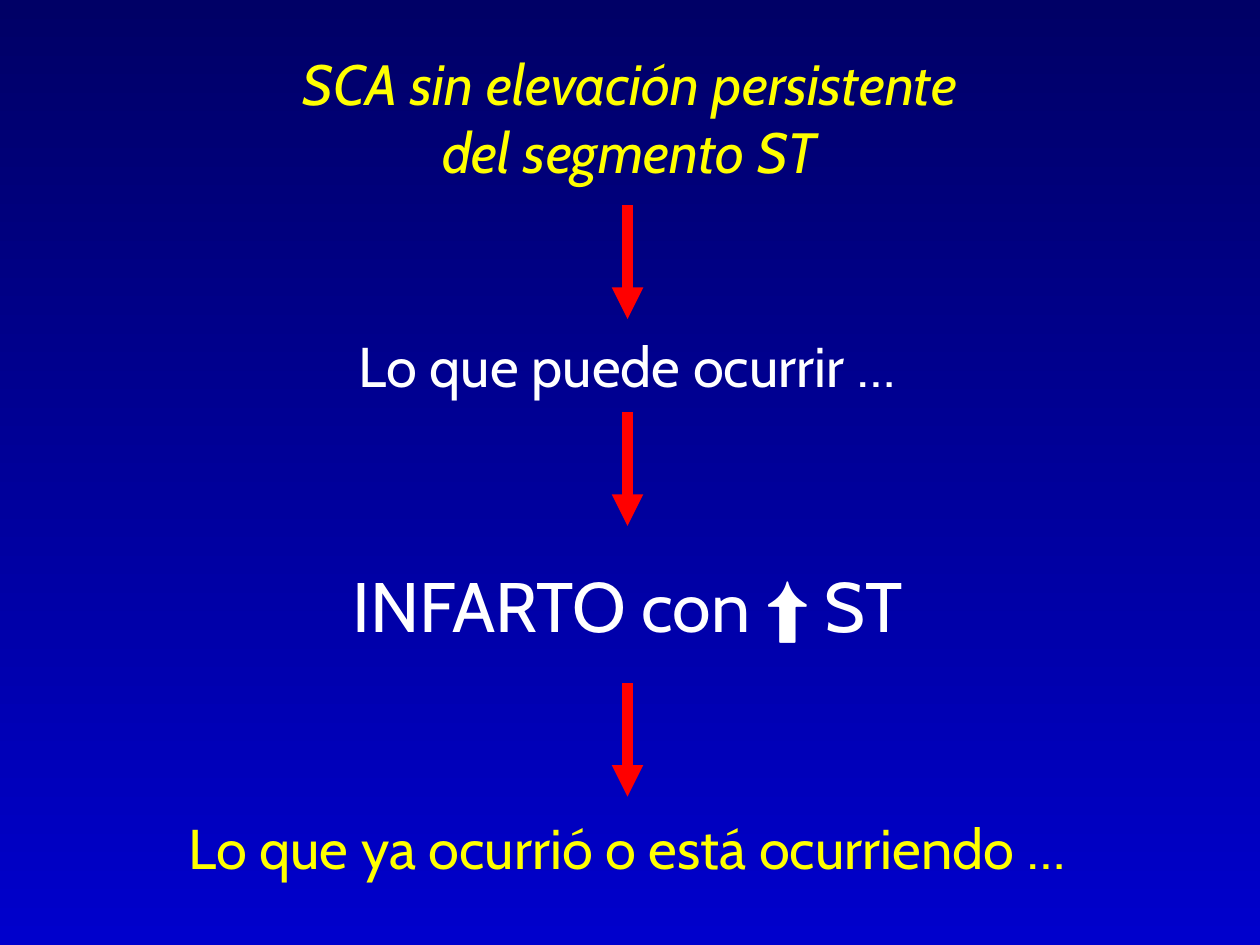
from lxml import etree
from pptx import Presentation
from pptx.dml.color import RGBColor
from pptx.enum.shapes import MSO_CONNECTOR
from pptx.enum.text import MSO_ANCHOR, MSO_AUTO_SIZE, PP_ALIGN
from pptx.oxml.ns import qn
from pptx.util import Cm, Pt

LINE = MSO_CONNECTOR.STRAIGHT
MIDDLE = MSO_ANCHOR.MIDDLE
NO_FIT = MSO_AUTO_SIZE.NONE
CENTER = PP_ALIGN.CENTER

COLORS = {
    "top": "000066",
    "base": "0000CC",
    "accent": "FFFF00",
    "plain": "FFFFFF",
    "arrow": "FF0000",
}
FRAME = {"word_wrap": True, "auto_size": NO_FIT, "vertical_anchor": MIDDLE}
TITLE = "SCA sin elevación persistente\vdel segmento ST"
STEPS = [
    ("Lo que puede ocurrir …", (1.85, 6.43, 21.59, 1.88), 32, "plain"),
    ("INFARTO con ⬆ ST", (2.92, 10.59, 19.46, 3.18), 40, "plain"),
    ("Lo que ya ocurrió o está ocurriendo …", (1.85, 16.05, 21.59, 2.06), 32, "accent"),
]
ARROW_X = 12.65
ARROW_LEN = 2.29
ARROW_TOPS = (4.14, 8.31, 13.77)


def rgb(name):
    return RGBColor.from_string(COLORS[name])


def apply(target, values):
    for name, value in values.items():
        setattr(target, name, value)


def paint_back(slide):
    fill = slide.background.fill
    fill.gradient()
    fill.gradient_angle = 270
    for stop, place, name in zip(fill.gradient_stops, (0, 1), ("top", "base")):
        stop.position = place
        stop.color.rgb = rgb(name)


def set_text(shape, text, size, color, italic=False):
    frame = shape.text_frame
    apply(frame, FRAME)
    para = frame.paragraphs[0]
    para.text = text
    para.alignment = CENTER
    for run in para.runs:
        apply(run.font, {"name": "Cabin", "size": Pt(size), "italic": italic})
        run.font.color.rgb = rgb(color)


def set_title(slide):
    title = slide.shapes.title
    box = {"left": 1.27, "top": 0.76, "width": 22.86, "height": 3.18}
    apply(title, {name: Cm(value) for name, value in box.items()})
    set_text(title, TITLE, 32.4, "accent", italic=True)


def add_step(slide, text, box, size, color):
    shape = slide.shapes.add_textbox(*map(Cm, box))
    set_text(shape, text, size, color)


def add_arrow(slide, top):
    ends = (ARROW_X, top, ARROW_X, top + ARROW_LEN)
    arrow = slide.shapes.add_connector(LINE, *map(Cm, ends))
    arrow.line.width = Pt(6)
    arrow.line.color.rgb = rgb("arrow")
    props = arrow.line._get_or_add_ln()
    etree.SubElement(props, qn("a:tailEnd"), type="triangle")
    etree.SubElement(props.getparent(), qn("a:effectLst"))


def main():
    deck = Presentation()
    apply(deck, {"slide_width": Cm(25.4), "slide_height": Cm(19.05)})
    slide = deck.slides.add_slide(deck.slide_layouts[5])
    paint_back(slide)
    set_title(slide)
    for step in STEPS:
        add_step(slide, *step)
    for top in ARROW_TOPS:
        add_arrow(slide, top)
    deck.save("out.pptx")


if __name__ == "__main__":
    main()
